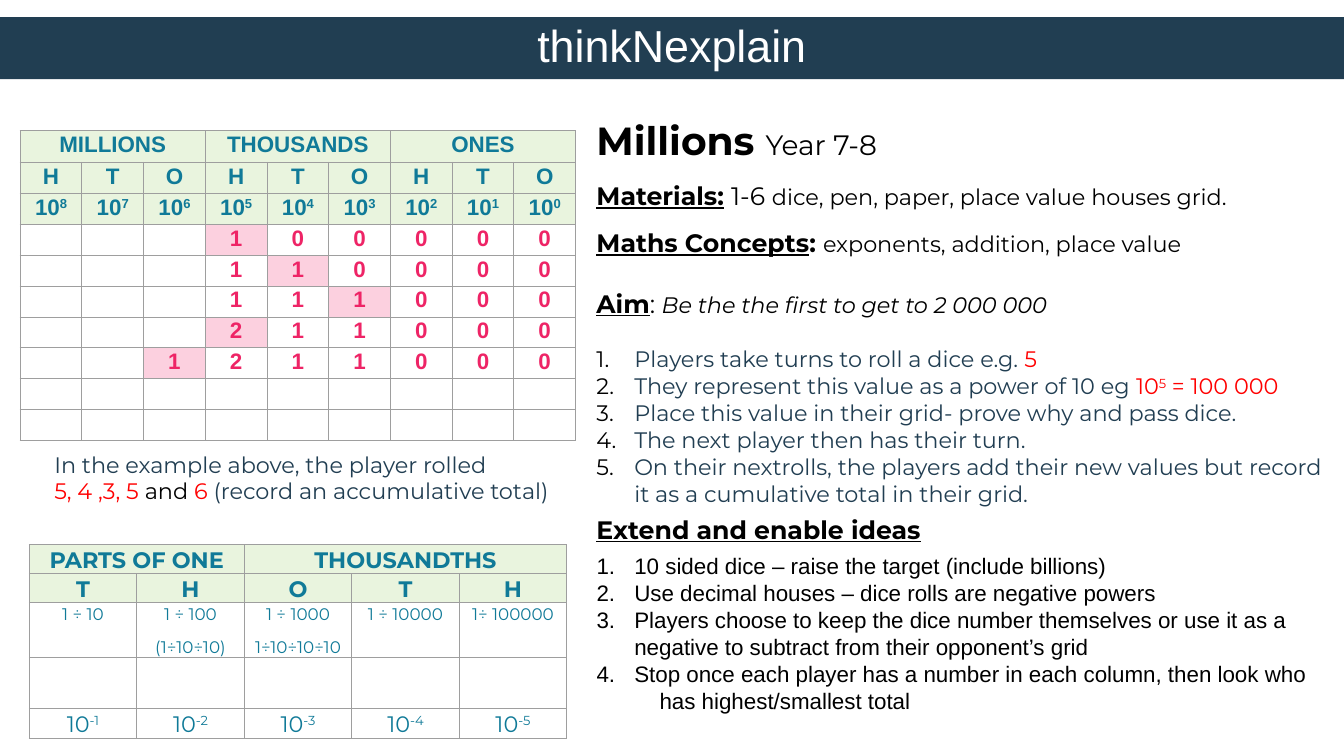
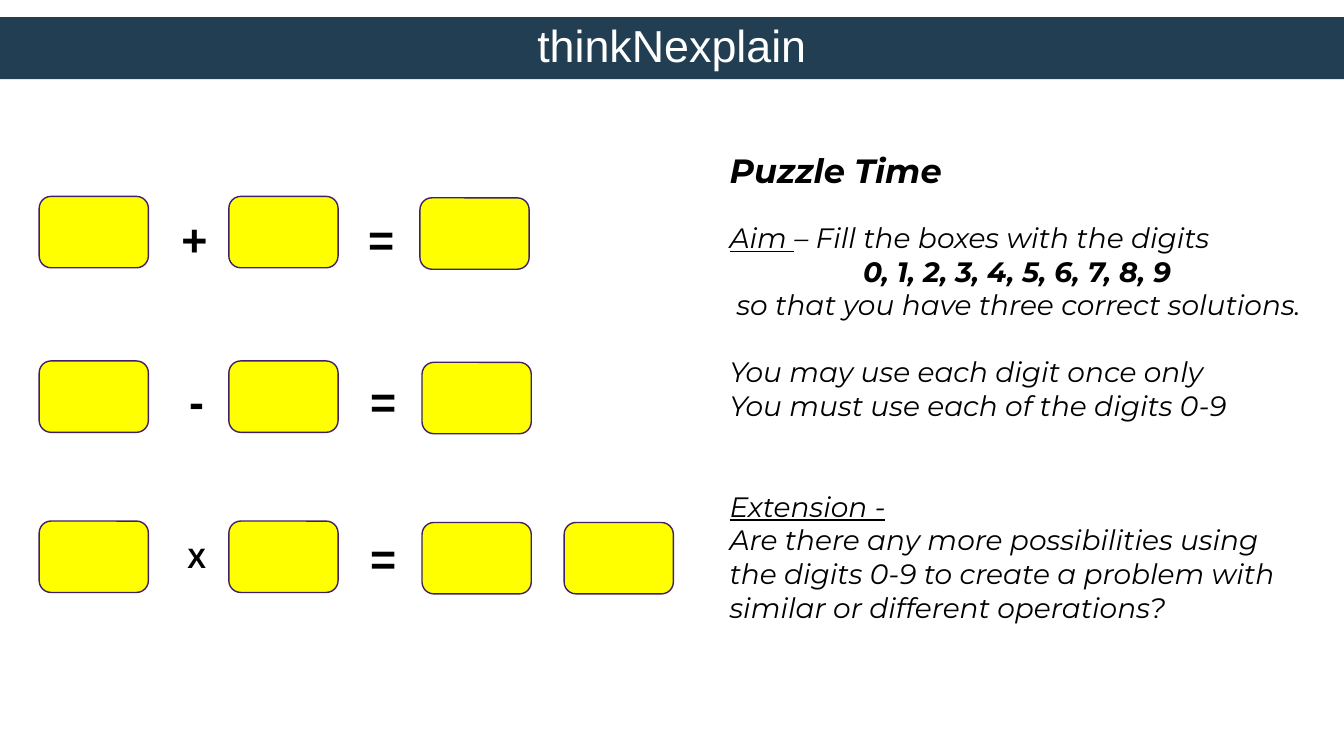
"""Build two maths game slides: a place value game and a digit puzzle."""
from lxml.etree import SubElement as Sub
from pptx import Presentation
from pptx.dml.color import RGBColor as RGB
from pptx.enum.shapes import MSO_SHAPE as Kind
from pptx.enum.text import MSO_ANCHOR as Anchor, PP_ALIGN as Align
from pptx.oxml.ns import qn
from pptx.util import Pt

NAVY = RGB(0x21, 0x3E, 0x52)
TEAL = RGB(0x10, 0x7A, 0x98)
PINK = RGB(0xEE, 0x24, 0x66)
ROSE = RGB(0xFC, 0xD0, 0xDF)
MINT = RGB(0xE9, 0xF4, 0xDE)
RED = RGB(0xFF, 0, 0)
YELLOW = RGB(0xFF, 0xFF, 0)
PURPLE = RGB(0x40, 0x21, 0x68)
BLACK = RGB(0, 0, 0)
WHITE = RGB(0xFF, 0xFF, 0xFF)
SANS = "Arial"
MONT = "Montserrat"
TITLE = "thinkNexplain"


class Deck:
    def __init__(self):
        self.show = Presentation()
        self.show.slide_width, self.show.slide_height = Pt(960), Pt(540)
        self.page = None

    def slide(self):
        self.page = self.show.slides.add_slide(self.show.slide_layouts[6])
        self.shape(Kind.RECTANGLE, (0, 12.2, 960, 44.4), NAVY)
        self.label(TITLE, (131, 9, 698, 46), 32, WHITE)

    def shape(self, kind, area, fill, line=None):
        item = self.page.shapes.add_shape(kind, *map(Pt, area))
        item.shadow.inherit = False
        item.fill.solid()
        item.fill.fore_color.rgb = fill
        if line:
            item.line.color.rgb = line
            item.line.width = Pt(1)
        else:
            item.line.fill.background()

    def frame(self, area):
        frame = self.page.shapes.add_textbox(*map(Pt, area)).text_frame
        frame.word_wrap = True
        return frame

    def label(self, text, area, size, color, marks=""):
        frame = self.frame(area)
        frame.text = text
        frame.vertical_anchor = Anchor.MIDDLE
        par = frame.paragraphs[0]
        par.alignment = Align.CENTER
        self.style(par.runs[0], SANS, size, color, marks)

    def style(self, run, face, size, color, marks=""):
        font = run.font
        font.name, font.size, font.color.rgb = face, Pt(size), color
        font.bold, font.italic, font.underline = (m in marks for m in "biu")
        if "^" in marks:
            font._element.set("baseline", "30000")

    def fill(self, par, runs, face, size, color=BLACK):
        for text, marks, *rest in runs:
            run = par.add_run()
            run.text = text
            tint, high = (rest + [None, None])[:2]
            self.style(run, face, high or size, tint or color, marks)

    def text(self, area, pars, face, size):
        frame = self.frame(area)
        for num, (runs, opts) in enumerate(pars):
            par = frame.add_paragraph() if num else frame.paragraphs[0]
            if "gap" in opts:
                par.space_before = Pt(opts["gap"])
            if "align" in opts:
                par.alignment = opts["align"]
            if "left" in opts:
                par._p.get_or_add_pPr().set("marL", str(Pt(opts["left"])))
            if opts.get("list"):
                self.number(par)
            self.fill(par, runs, face, size)

    def number(self, par):
        prop = par._p.get_or_add_pPr()
        prop.set("marL", str(Pt(27)))
        prop.set("indent", str(Pt(-27)))
        Sub(Sub(prop, qn("a:buClr")), qn("a:srgbClr"), val=str(BLACK))
        Sub(prop, qn("a:buAutoNum"), type="arabicPeriod")

    def table(self, spot, wide, highs, rows, spans, look):
        cols = len(rows[0])
        area = (*spot, wide * cols, sum(highs))
        grid = self.page.shapes.add_table(len(rows), cols, *map(Pt, area)).table
        grid.first_row = grid.horz_banding = False
        for col in grid.columns:
            col.width = Pt(wide)
        for row, high in zip(grid.rows, highs):
            row.height = Pt(high)
        for y, row in enumerate(rows):
            for x, text in enumerate(row):
                self.cell(grid.cell(y, x), text, *look(y, text))
        for start, end in spans:
            grid.cell(0, start).merge(grid.cell(0, end))

    def cell(self, cell, text, face, size, color, marks, back):
        cell.margin_left = cell.margin_right = Pt(5)
        cell.margin_top = cell.margin_bottom = 0
        cell.fill.solid()
        cell.fill.fore_color.rgb = back
        prop = cell._tc.get_or_add_tcPr()
        for spot, side in enumerate("LRTB"):
            line = Sub(prop, qn("a:ln" + side), w=str(Pt(0.75)))
            Sub(Sub(line, qn("a:solidFill")), qn("a:srgbClr"), val="9E9E9E")
            prop.insert(spot, line)
        if not text:
            return
        for num, part in enumerate(text.strip("*").split("\n")):
            frame = cell.text_frame
            par = frame.add_paragraph() if num else frame.paragraphs[0]
            par.alignment, par.line_spacing = Align.CENTER, 1.07
            if num:
                par.space_before = Pt(8)
            base, _, power = part.partition("^")
            runs = [(base, marks)]
            if power:
                runs.append((power, marks + "^"))
            self.fill(par, runs, face, size, color)


def whole(y, text):
    if y < 3:
        return SANS, 16, TEAL, "b", MINT
    return SANS, 16, PINK, "b", ROSE if "*" in text else WHITE


def part(y, text):
    if y < 2:
        return MONT, 16, TEAL, "b", MINT
    return MONT, 12 if y == 2 else 16, TEAL, "", WHITE


def game(deck):
    deck.slide()
    rules = [
        [("Players take turns to roll a dice e.g. ", "", NAVY), ("5", "", RED)],
        [("They represent this value as a power of 10 eg ", "", NAVY),
         ("10", "", RED), ("5", "^", RED), (" = 100 000", "", RED)],
        [("Place this value in their grid- prove why and pass dice.", "", NAVY)],
        [("The next player then has their turn.", "", NAVY)],
        [("On their nextrolls, the players add their new values but record "
          "it as a cumulative total in their grid.", "", NAVY)],
    ]
    deck.text((419, 79.6, 534, 342), [
        ([("Millions ", "b", BLACK, 28), ("Year 7-8", "", BLACK, 20)], {}),
        ([("Materials:", "bu", BLACK, 18), (" ", "b", BLACK, 18),
          ("1-6 ", "", BLACK, 18),
          ("dice, pen, paper, place value houses grid.", "")], {"gap": 12}),
        ([("Maths Concepts", "bu", BLACK, 18), (": ", "b", BLACK, 18),
          ("exponents, addition, place value", "")], {"gap": 12}),
        ([("Aim", "bu", BLACK, 18), (": ", "", BLACK, 18),
          ("Be the the first to get to 2 000 000", "i")], {"gap": 21.8}),
        *((runs, {"list": True, "gap": 0 if num else 19.5})
          for num, runs in enumerate(rules)),
    ], MONT, 16)
    deck.text((419, 363.6, 548, 51),
              [([("Extend and enable ideas", "bu")], {})], MONT, 18)
    houses = [["MILLIONS", "", "", "THOUSANDS", "", "", "ONES", "", ""],
              list("HTO" * 3),
              [f"10^{power}" for power in range(8, -1, -1)]]
    turns = ["   *00000", "   1*0000", "   11*000", "   *11000",
             "  *211000", " " * 9, " " * 9]
    stars = ["1", "1", "1", "2", "1", "", ""]
    for turn, star in zip(turns, stars):
        houses.append([f"*{star}" if mark == "*" else mark.strip()
                       for mark in turn])
    deck.table((14.4, 93.2), 44.1, [22.8] + [22.1] * 9, houses,
               [(0, 2), (3, 5), (6, 8)], whole)
    deck.text((31.7, 318.4, 486, 46), [
        ([("In the example above, the player rolled", "", NAVY)], {}),
        ([("5, 4 ,3, 5 ", "", RED), ("and", ""), (" 6 ", "", RED),
          ("(record an accumulative total)", "", NAVY)], {}),
    ], MONT, 16)
    deck.table((20.9, 389), 76.8, [20.8, 20.8, 38.5, 37, 20.8], [
        ["PARTS OF ONE", "", "THOUSANDTHS", "", ""],
        list("THOTH"),
        ["1 ÷ 10", "1 ÷ 100\n(1÷10÷10)", "1 ÷ 1000\n1÷10÷10÷10",
         "1 ÷ 10000", "1÷ 100000"],
        [""] * 5,
        [f"10^-{power}" for power in range(1, 6)],
    ], [(0, 1), (2, 4)], part)
    ideas = [
        "10 sided dice – raise the target (include billions)",
        "Use decimal houses – dice rolls are negative powers",
        "Players choose to keep the dice number themselves or use it as a "
        "negative to subtract from their opponent’s grid",
        "Stop once each player has a number in each column, then look who",
    ]
    deck.text((419, 391, 541, 140), [
        *(([(idea, "")], {"list": True}) for idea in ideas),
        ([("has highest/smallest total", "")], {"left": 45}),
    ], SANS, 16)


def puzzle(deck):
    deck.slide()
    sums = [(140.3, "+", 32, -1.5, 4.5, 1),
            (257.8, "-", 32, 0, 3, 1),
            (372.2, "X", 20, 0, 0.5, 2)]
    for top, sign, size, shift, drop, count in sums:
        spots = [(28, top), (163.5, top)]
        spots += [(301.5 + shift + 101.5 * num, top + 1) for num in range(count)]
        for spot in spots:
            deck.shape(Kind.ROUNDED_RECTANGLE, (*spot, 78, 51), YELLOW, PURPLE)
        for left, mark, high in ((114.2, sign, size), (247.5, "=", 32)):
            area = (left + shift, top + 2.5 + drop, 52.6, 46)
            deck.label(mark, area, high, BLACK, "b")
    deck.text((514, 103.7, 425, 415), [
        ([("Puzzle Time", "bi", BLACK, 24)], {}),
        ([("Aim ", "iu"), ("– Fill the boxes with the digits", "i")],
         {"gap": 21.5}),
        ([("0, 1, 2, 3, 4, 5, 6, 7, 8, 9", "bi")], {"align": Align.CENTER}),
        ([("so that you have three correct solutions.", "i")], {"left": 5}),
        ([("You may use each digit once only", "i")], {"gap": 24}),
        ([("You must use each of the digits 0-9", "i")], {}),
        ([("Extension -", "iu")], {"gap": 48}),
        ([("Are there any more possibilities using the digits 0-9 to create "
           "a problem with similar or different operations?", "i")], {}),
    ], MONT, 20)


def main():
    deck = Deck()
    game(deck)
    puzzle(deck)
    deck.show.save("out.pptx")


if __name__ == "__main__":
    main()
